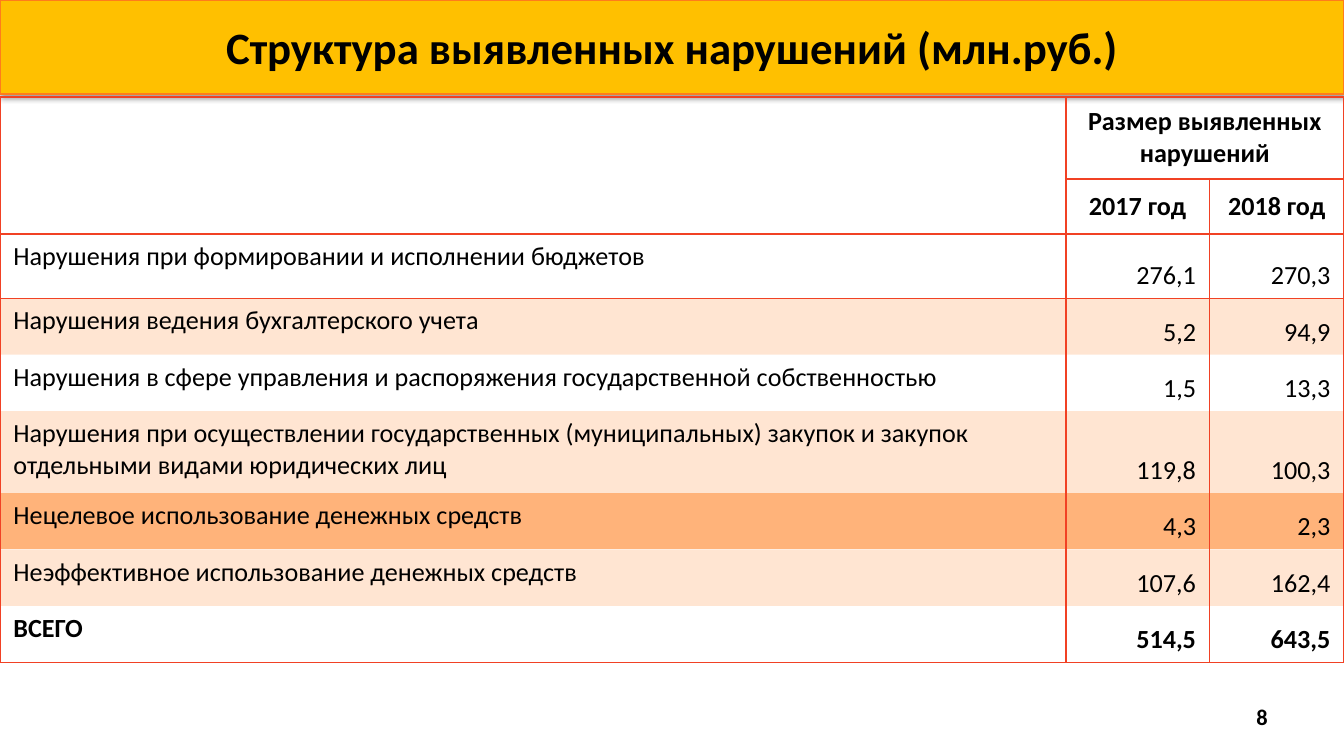
from dataclasses import dataclass

import pptx
import pptx.dml.color
import pptx.enum.text
import pptx.oxml
import pptx.oxml.ns
import pptx.util
from pptx.util import Inches

Align = pptx.enum.text.PP_ALIGN
Anchor = pptx.enum.text.MSO_ANCHOR
NS = 'xmlns:a="http://schemas.openxmlformats.org/drawingml/2006/main"'
BORDER_COLOR = "F14124"
NO_STYLE = "{2D5ABB26-0587-4C30-8999-92F81FD0307C}"


@dataclass
class Fill:
    color: str
    opacity: int = 100


@dataclass
class Violation:
    name: str
    amounts: tuple[str, str]
    height: float = 0.42
    fill: Fill | None = None
    bold: bool = False


TINT = Fill("FF8021", 20)
VIOLATIONS = [
    Violation("Нарушения при формировании и исполнении бюджетов", ("276,1", "270,3"), 0.48),
    Violation("Нарушения ведения бухгалтерского учета", ("5,2", "94,9"), fill=TINT),
    Violation("Нарушения в сфере управления и распоряжения государственной собственностью",
              ("1,5", "13,3")),
    Violation("Нарушения при осуществлении государственных (муниципальных) закупок и закупок "
              "отдельными видами юридических лиц", ("119,8", "100,3"), 0.61, TINT),
    Violation("Нецелевое использование денежных средств", ("4,3", "2,3"), fill=Fill("FFB37A")),
    Violation("Неэффективное использование денежных средств", ("107,6", "162,4"), fill=TINT),
    Violation("ВСЕГО", ("514,5", "643,5"), bold=True),
]
HEADER_HEIGHTS = [0.61, 0.41]
COLUMN_WIDTHS = [7.93, 1.07, 1]


def rgb(color: str) -> pptx.dml.color.RGBColor:
    return pptx.dml.color.RGBColor.from_string(color)


def write(frame, text: str, size: float, align, bold: bool = False) -> None:
    frame.text = text
    paragraph = frame.paragraphs[0]
    paragraph.alignment = align
    font_format = {"name": "Calibri", "size": pptx.util.Pt(size), "bold": bold}
    for attribute, value in font_format.items():
        setattr(paragraph.font, attribute, value)
    paragraph.font.color.rgb = rgb("000000")


def set_borders(cell, sides: str) -> None:
    """Draw the sides named by the letters L, R, T, B; hide the others."""
    properties = cell._tc.get_or_add_tcPr()
    for side in "LRTB":
        paint = (f'<a:solidFill><a:srgbClr val="{BORDER_COLOR}"/></a:solidFill>'
                 if side in sides else "<a:noFill/>")
        properties.append(pptx.oxml.parse_xml(f'<a:ln{side} {NS} w="12700">{paint}</a:ln{side}>'))


def set_fill(cell, fill: Fill | None) -> None:
    if fill is None:
        cell.fill.background()
        return
    cell.fill.solid()
    cell.fill.fore_color.rgb = rgb(fill.color)
    if fill.opacity < 100:
        color = cell._tc.tcPr.find(
            f"{pptx.oxml.ns.qn('a:solidFill')}/{pptx.oxml.ns.qn('a:srgbClr')}")
        color.append(pptx.oxml.parse_xml(f'<a:alpha {NS} val="{fill.opacity * 1000}"/>'))


def add_title(slide) -> None:
    title = slide.shapes.title
    place = {"left": 0, "top": 0, "width": Inches(10), "height": Inches(0.7)}
    for attribute, value in place.items():
        setattr(title, attribute, value)
    title.fill.solid()
    title.fill.fore_color.rgb = rgb("FFC000")
    title.line.color.rgb = rgb("FF7C1B")
    title.line.width = pptx.util.Pt(0.75)
    title._element.spPr.append(pptx.oxml.parse_xml(
        f'<a:effectLst {NS}><a:outerShdw blurRad="40000" dist="20000" dir="5400000" '
        'rotWithShape="0"><a:srgbClr val="000000"><a:alpha val="38000"/></a:srgbClr>'
        "</a:outerShdw></a:effectLst>"))
    title.text_frame.auto_size = pptx.enum.text.MSO_AUTO_SIZE.NONE
    title.text_frame.vertical_anchor = Anchor.MIDDLE
    write(title.text_frame, "Структура выявленных нарушений (млн.руб.)", 24, Align.CENTER, True)


def add_violations_table(slide) -> None:
    heights = HEADER_HEIGHTS + [violation.height for violation in VIOLATIONS]
    frame = slide.shapes.add_table(len(heights), len(COLUMN_WIDTHS), 0, Inches(0.72),
                                   Inches(10), Inches(sum(heights)))
    table = frame.table
    table.first_row = table.horz_banding = False
    table._tbl.tblPr.find(pptx.oxml.ns.qn("a:tableStyleId")).text = NO_STYLE
    for column, width in zip(table.columns, COLUMN_WIDTHS):
        column.width = Inches(width)

    first_body, last = len(HEADER_HEIGHTS), len(heights) - 1
    for index, (row, height) in enumerate(zip(table.rows, heights)):
        row.height = Inches(height)
        top = "T" if index <= first_body + 1 else ""
        bottom = "B" if index <= first_body or index == last else ""
        for cell in row.cells:
            set_borders(cell, "LR" + top + bottom)
            set_fill(cell, VIOLATIONS[index - first_body].fill if index >= first_body else None)

    table.cell(0, 0).merge(table.cell(1, 0))
    table.cell(0, 1).merge(table.cell(0, 2))
    headings = {(0, 1): "Размер выявленных нарушений", (1, 1): "2017 год", (1, 2): "2018 год"}
    for position, heading in headings.items():
        cell = table.cell(*position)
        cell.vertical_anchor = Anchor.MIDDLE
        write(cell.text_frame, heading, 14, Align.CENTER, True)
    for column in (1, 2):
        set_fill(table.cell(1, column), Fill("FFFFFF", 20))

    for index, violation in enumerate(VIOLATIONS, first_body):
        write(table.cell(index, 0).text_frame, violation.name, 14, Align.LEFT, violation.bold)
        for column, amount in enumerate(violation.amounts, 1):
            cell = table.cell(index, column)
            cell.vertical_anchor = Anchor.BOTTOM
            write(cell.text_frame, amount, 14, Align.RIGHT, violation.bold)


def add_page_number(slide) -> None:
    page = slide.shapes.add_textbox(Inches(9.25), Inches(5.18), Inches(0.28), Inches(0.3))
    page.text_frame.word_wrap = True
    page.text_frame.vertical_anchor = Anchor.MIDDLE
    write(page.text_frame, "8", 12, Align.RIGHT, True)


def main() -> None:
    presentation = pptx.Presentation()
    presentation.slide_width = Inches(10)
    presentation.slide_height = presentation.slide_width * 9 // 16
    slide = presentation.slides.add_slide(presentation.slide_layouts.get_by_name("Title Only"))
    add_title(slide)
    add_violations_table(slide)
    add_page_number(slide)
    presentation.save("out.pptx")


if __name__ == "__main__":
    main()
